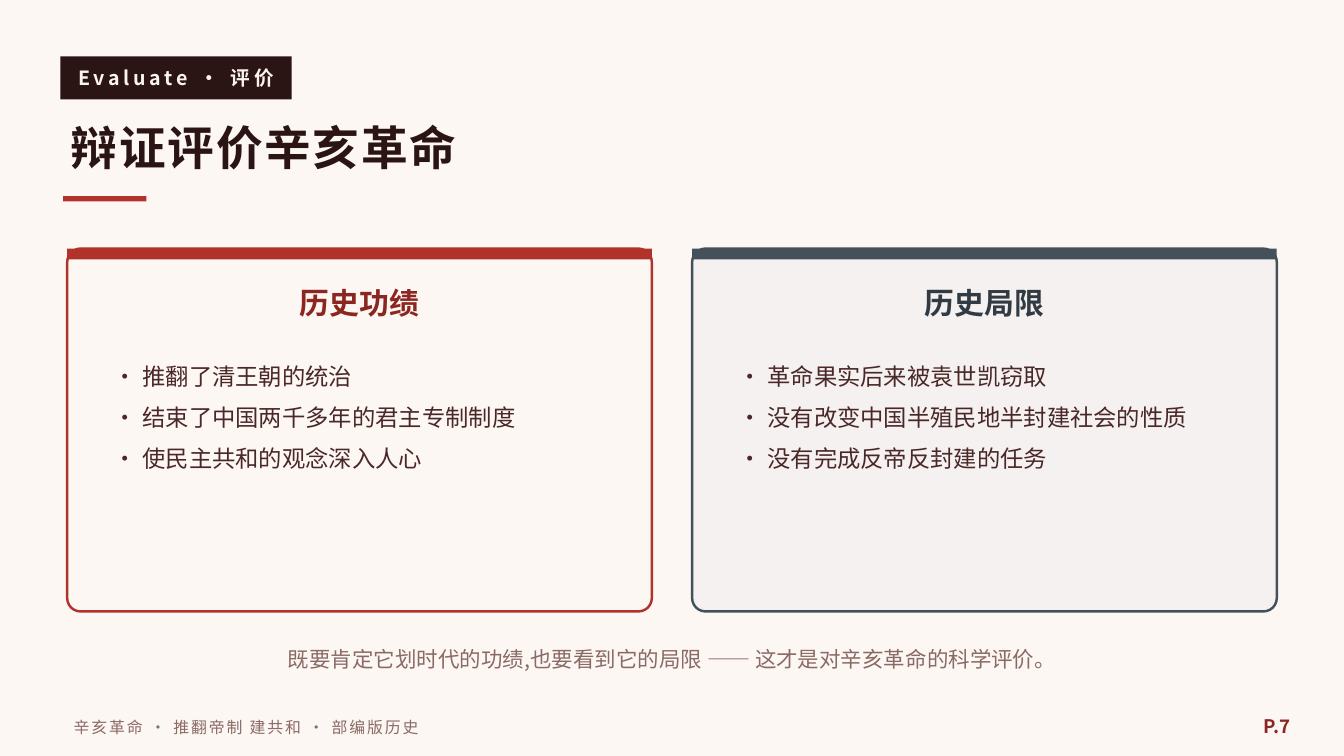
from lxml.etree import SubElement
from pptx import Presentation
from pptx.dml.color import RGBColor
from pptx.enum.shapes import MSO_SHAPE
from pptx.enum.text import MSO_ANCHOR, PP_ALIGN
from pptx.oxml.ns import qn
from pptx.util import Inches, Pt

FONT = "Noto Sans CJK SC"
PAPER, INK, RED, DARK_RED, MUTED, BODY = "FDF7F4", "2A1414", "B0322A", "8C2620", "8A6A64", "4A2828"

TAG = "Evaluate · 评价"
TITLE = "辩证评价辛亥革命"
CARDS = [
    {
        "heading": "历史功绩",
        "points": ["· 推翻了清王朝的统治", "· 结束了中国两千多年的君主专制制度", "· 使民主共和的观念深入人心"],
        "fill": PAPER, "accent": RED, "heading_color": DARK_RED,
    },
    {
        "heading": "历史局限",
        "points": ["· 革命果实后来被袁世凯窃取", "· 没有改变中国半殖民地半封建社会的性质", "· 没有完成反帝反封建的任务"],
        "fill": "F4F1F0", "accent": "44505A", "heading_color": "323B43",
    },
]
SUMMARY = "既要肯定它划时代的功绩,也要看到它的局限 —— 这才是对辛亥革命的科学评价。"
FOOTER = "辛亥革命 · 推翻帝制 建共和 · 部编版历史"
PAGE_NUMBER = "P.7"

PAGE_WIDTH = 10
PAGE_HEIGHT = PAGE_WIDTH * 9 / 16
CARD_LEFT, CARD_TOP, CARD_WIDTH, CARD_HEIGHT, CARD_GAP = 0.5, 1.85, 4.35, 2.7, 0.3


def color(value):
    """Turn a hex string into a colour."""
    return RGBColor.from_string(value)


def add_block(page, area, fill, line=None, radius=None):
    """Add a filled rectangle, rounded when a radius is given."""
    kind = MSO_SHAPE.RECTANGLE if radius is None else MSO_SHAPE.ROUNDED_RECTANGLE
    block = page.shapes.add_shape(kind, *map(Inches, area))
    block.shadow.inherit = False
    block.fill.solid()
    block.fill.fore_color.rgb = color(fill)
    if radius is not None:
        block.adjustments[0] = radius / min(area[2:])
    if line:
        block.line.color.rgb = color(line)
        block.line.width = Pt(1.3)
    else:
        block.line.fill.background()


def add_text(page, area, lines, size, ink, bold=False, align=PP_ALIGN.LEFT,
             anchor=MSO_ANCHOR.MIDDLE, tracking=0, leading=None):
    """Add a text box with one paragraph for each line."""
    box = page.shapes.add_textbox(*map(Inches, area))
    frame = box.text_frame
    frame.word_wrap = True
    frame.vertical_anchor = anchor
    for index, line in enumerate(lines):
        para = frame.add_paragraph() if index else frame.paragraphs[0]
        para.alignment = align
        if leading:
            para.line_spacing = Pt(leading)
        span = para.add_run()
        span.text = line
        span.font.name = FONT
        span.font.size = Pt(size)
        span.font.bold = bold
        span.font.color.rgb = color(ink)
        properties = span.font._element
        SubElement(properties, qn("a:ea"), typeface=FONT)
        if tracking:
            properties.set("spc", str(tracking * 100))


def add_card(page, left, card):
    """Add a card with a top bar, a heading and its points."""
    accent = card["accent"]
    add_block(page, (left, CARD_TOP, CARD_WIDTH, CARD_HEIGHT), card["fill"], accent, radius=0.1)
    add_block(page, (left, CARD_TOP, CARD_WIDTH, 0.08), accent)
    add_text(page, (left, CARD_TOP + 0.2, CARD_WIDTH, 0.4), [card["heading"]], 16,
             card["heading_color"], bold=True, align=PP_ALIGN.CENTER)
    add_text(page, (left + 0.25, CARD_TOP + 0.7, CARD_WIDTH - 0.45, 1.8), card["points"], 12.5,
             BODY, anchor=MSO_ANCHOR.TOP, leading=22)


def main():
    """Build the slide and save the deck."""
    deck = Presentation()
    deck.slide_width, deck.slide_height = Inches(PAGE_WIDTH), Inches(PAGE_HEIGHT)
    page = deck.slides.add_slide(deck.slide_layouts[6])
    page.background.fill.solid()
    page.background.fill.fore_color.rgb = color(PAPER)

    add_block(page, (0.45, 0.42, 1.72, 0.32), INK)
    add_text(page, (0.45, 0.41, 1.72, 0.34), [TAG], 10.5, "FBF3EF", bold=True,
             align=PP_ALIGN.CENTER, tracking=2)
    add_text(page, (0.43, 0.78, 9, 0.62), [TITLE], 25, INK, bold=True, tracking=1)
    add_block(page, (0.47, 1.46, 0.62, 0.04), RED)

    for index, card in enumerate(CARDS):
        add_card(page, CARD_LEFT + index * (CARD_WIDTH + CARD_GAP), card)

    add_text(page, (0.5, 4.7, 9, 0.4), [SUMMARY], 11.5, MUTED, align=PP_ALIGN.CENTER)
    add_text(page, (0.45, 5.26, 6.5, 0.3), [FOOTER], 8.5, MUTED, tracking=1)
    add_text(page, (9.1, 5.24, 0.6, 0.32), [PAGE_NUMBER], 10, DARK_RED, bold=True,
             align=PP_ALIGN.RIGHT)
    deck.save("out.pptx")


if __name__ == "__main__":
    main()
